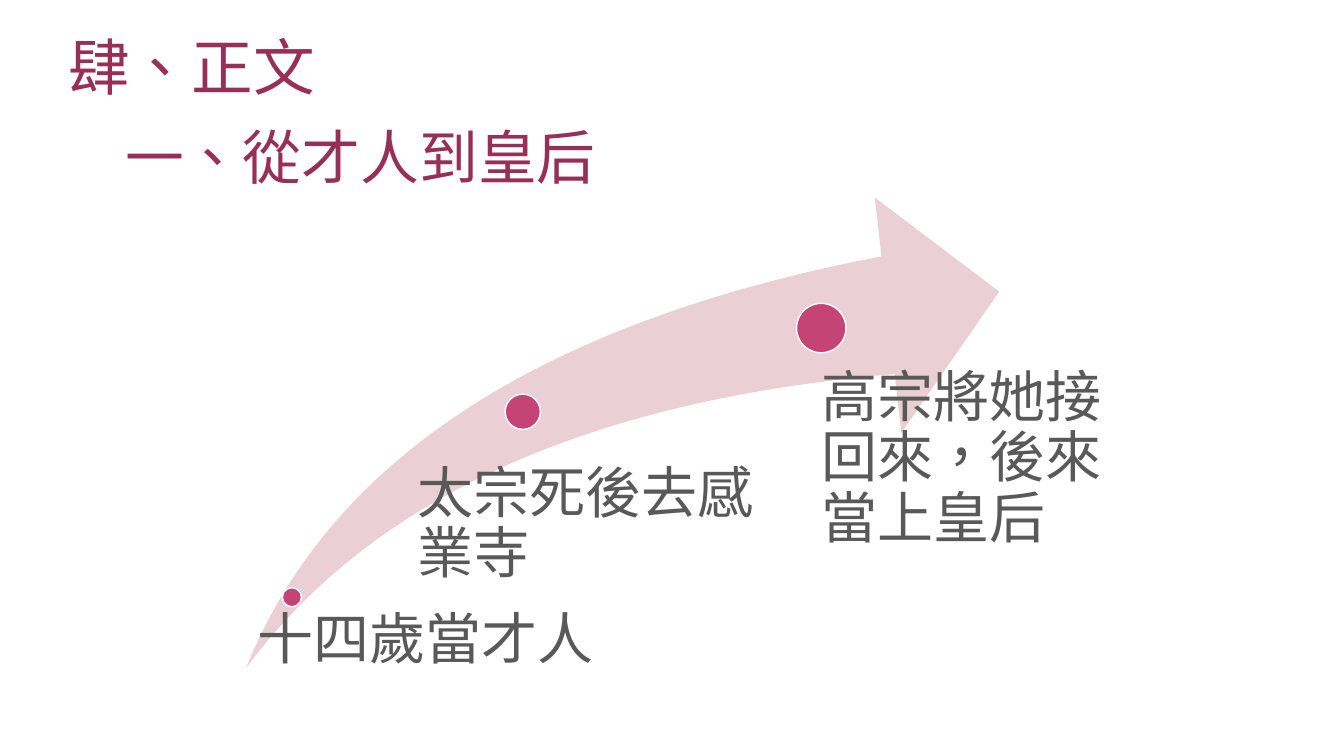
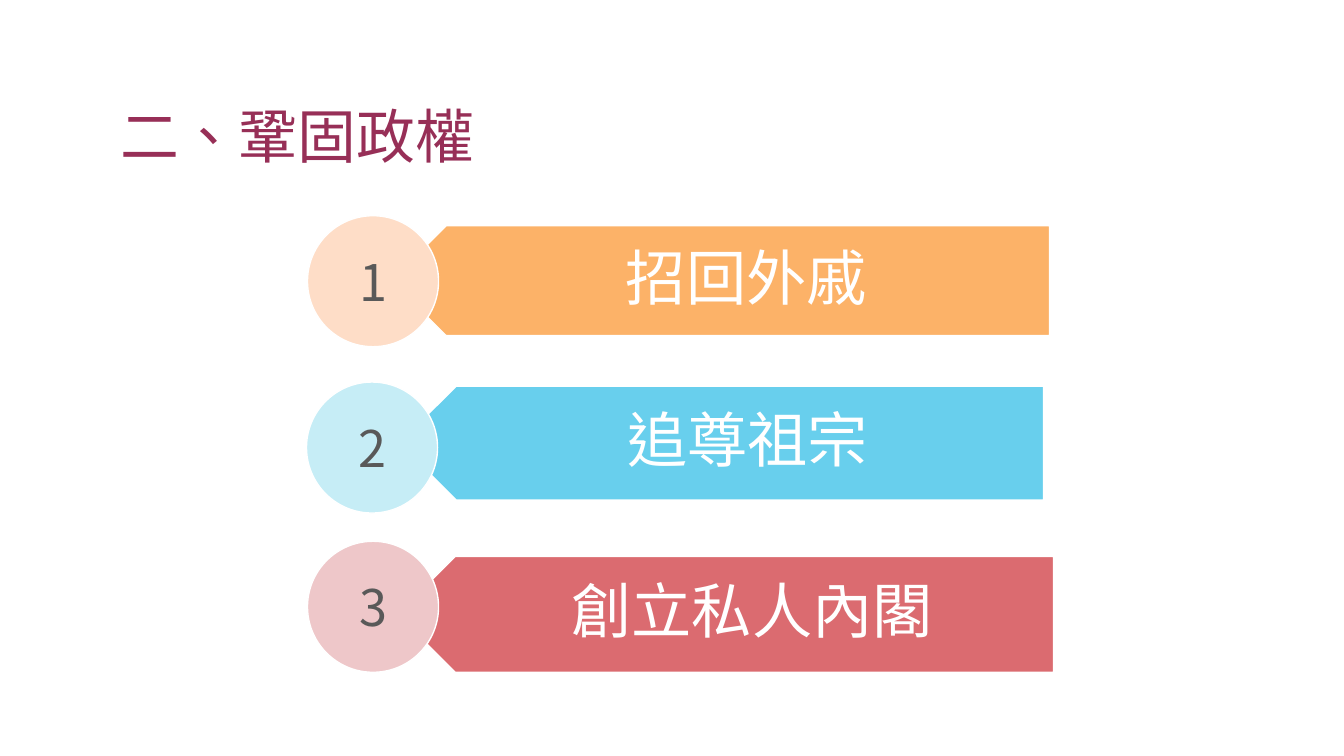
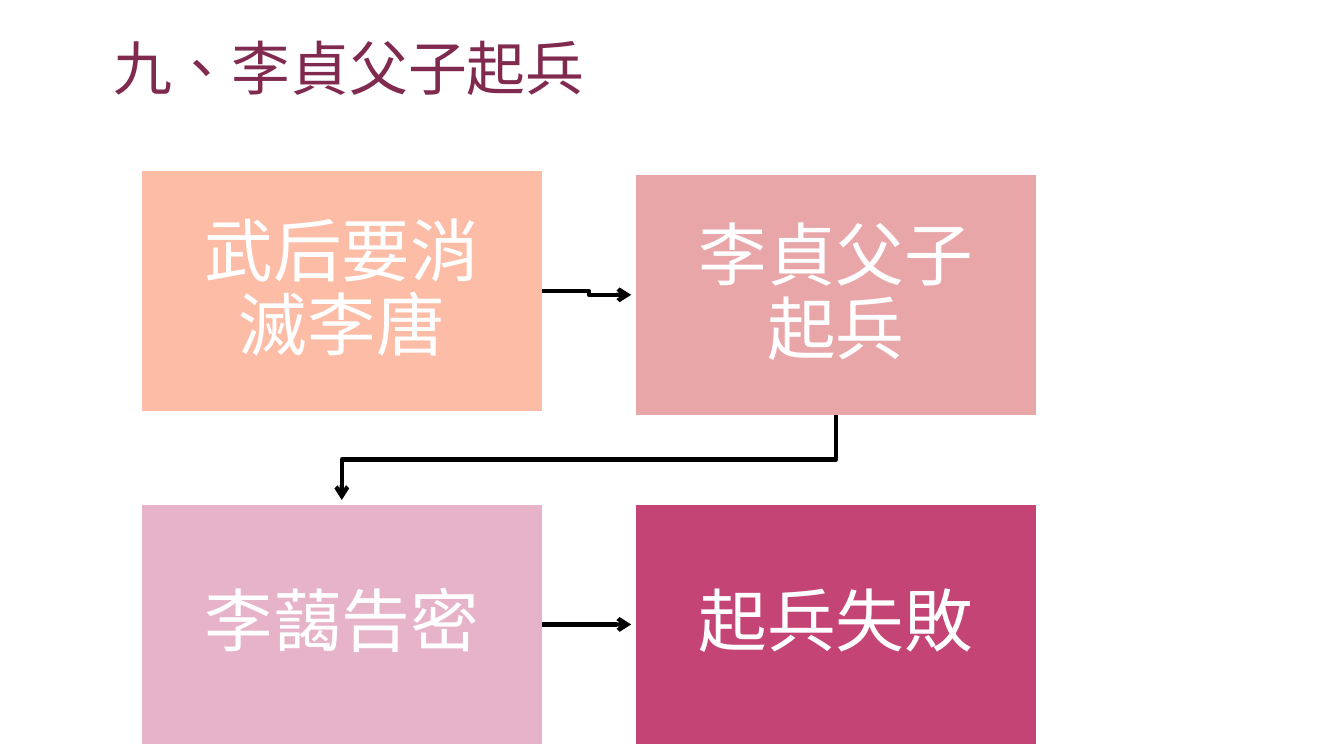
"""Three slides on the rise and rule of an empress."""
from lxml import etree
from pptx import Presentation, util as u
from pptx.dml.color import RGBColor
from pptx.enum import shapes, text
from pptx.oxml.ns import qn

FONT = "Noto Sans CJK SC"
PLUM, WINE, ROSE, GREY, WHITE, BLACK = "972F57", "812A4F", "C44475", "595959", "FFFFFF", "000000"
LEFT, CENTER = text.PP_ALIGN.LEFT, text.PP_ALIGN.CENTER
TOP, MIDDLE, BOTTOM = text.MSO_ANCHOR.TOP, text.MSO_ANCHOR.MIDDLE, text.MSO_ANCHOR.BOTTOM
SHAPE = shapes.MSO_SHAPE

SWOOSH = (2.44, 1.96, 7.47, 4.67)
MILESTONES = [
    ("十四歲當才人", (2.8, 5.83, 0.19), (2.46, 6.06, 3.87, 0.34), 0.1),
    ("太宗死後去感業寺", (5.01, 3.91, 0.35), (3.95, 4.61, 3.97, 0.16), 0.19),
    ("高宗將她接回來，後來當上皇后", (7.9, 3.01, 0.49), (7.89, 3.66, 3.05, 1.05), 0.26),
]
MEASURES = [
    ("招回外戚", "FCB268", (3.88, 2.24, 6.53, 1.09), "FEDDC7", (3.05, 2.14)),
    ("追尊祖宗", "68CFED", (3.96, 3.83, 6.39, 1.13), "C6EDF6", (3.04, 3.79)),
    ("創立私人內閣", "DB6B70", (3.94, 5.52, 6.51, 1.15), "EEC7C9", (3.05, 5.37)),
]
DISC = 1.3
STEP_W, STEP_H, STEP_GAP = 3.98, 2.39, 0.04
STEPS = [
    ("武后要消滅李唐", "FCBCA6", 1.4, 1.69),
    ("李貞父子起兵", "E9A6A9", 6.3, 1.73),
    ("李藹告密", "E6B3C9", 1.4, 5),
    ("起兵失敗", ROSE, 6.3, 5),
]


def rgb(value):
    return RGBColor.from_string(value)


def inches(values):
    return [u.Inches(value) for value in values]


def write(holder, words, size, color, align=LEFT, anchor=TOP, spacing=0.9,
          insets=(0.1, 0.05, 0.1, 0.05), wrap=True):
    frame = holder.text_frame
    frame.word_wrap = wrap
    frame.auto_size = text.MSO_AUTO_SIZE.NONE if wrap else text.MSO_AUTO_SIZE.SHAPE_TO_FIT_TEXT
    frame.vertical_anchor = anchor
    (frame.margin_left, frame.margin_top,
     frame.margin_right, frame.margin_bottom) = inches(insets)
    paragraph = frame.paragraphs[0]
    paragraph.alignment, paragraph.line_spacing = align, spacing
    run = paragraph.add_run()
    run.text = words
    run.font.size, run.font.name = u.Pt(size), FONT
    run.font.color.rgb = rgb(color)
    properties = run._r.get_or_add_rPr()
    properties.set("lang", "zh-TW")
    etree.SubElement(properties, qn("a:ea")).set("typeface", FONT)


def textbox(slide, area, words, size, color, **style):
    write(slide.shapes.add_textbox(*inches(area)), words, size, color, **style)


def titled_slide(deck, words, area, color=PLUM, **style):
    slide = deck.slides.add_slide(deck.slide_layouts[5])
    title = slide.shapes.title
    title.left, title.top, title.width, title.height = inches(area)
    write(title, words, 42, color, **style)
    return slide


def block(slide, kind, area, fill, line=WHITE):
    shape = slide.shapes.add_shape(kind, *inches(area))
    shape.shadow.inherit = False
    shape.fill.solid()
    shape.fill.fore_color.rgb = rgb(fill)
    if line:
        shape.line.color.rgb, shape.line.width = rgb(line), u.Pt(1)
    else:
        shape.line.fill.background()
    return shape


def arrow(slide, *points):
    start, *rest = [tuple(inches(point)) for point in points]
    if len(rest) == 1:
        route = slide.shapes.add_connector(shapes.MSO_CONNECTOR.STRAIGHT, *start, *rest[0])
    else:
        builder = slide.shapes.build_freeform(*start, scale=1.0)
        builder.add_line_segments(rest, close=False)
        route = builder.convert_to_shape()
        route.fill.background()
    route.line.color.rgb, route.line.width = rgb(BLACK), u.Pt(3)
    etree.SubElement(route.line._get_or_add_ln(), qn("a:tailEnd")).set("type", "arrow")
    etree.SubElement(route._element.spPr, qn("a:effectLst"))


def rise_slide(deck):
    slide = titled_slide(deck, "一、從才人到皇后", (1.14, 0.66, 11, 1.3), anchor=BOTTOM)
    textbox(slide, (0.58, 0.24, 2.67, 0.84), "肆、正文", 44, PLUM, spacing=1.0, wrap=False)
    swoosh = block(slide, SHAPE.SWOOSH_ARROW, SWOOSH, "EACFD6", line=None)
    swoosh.adjustments[0] = swoosh.adjustments[1] = 0.25
    for words, (left, top, size), area, indent in MILESTONES:
        block(slide, SHAPE.OVAL, (left, top, size, size), ROSE)
        textbox(slide, area, words, 40, GREY, insets=(indent, 0, 0, 0))


def power_slide(deck):
    slide = titled_slide(deck, "二、鞏固政權", (1.1, 0.45, 11, 1.3), anchor=BOTTOM)
    for number, (words, color, plate, tint, corner) in enumerate(MEASURES, 1):
        left, top, width, height = plate
        block(slide, SHAPE.PENTAGON, plate, color).rotation = 180
        point = height / 4
        textbox(slide, (left + point, top, width - point, height), words, 43, WHITE,
                align=CENTER, anchor=MIDDLE, insets=(0.57, 0.18, 0.33, 0.18))
        disc = block(slide, SHAPE.OVAL, (*corner, DISC, DISC), tint)
        write(disc, str(number), 36, GREY, align=CENTER, anchor=MIDDLE, spacing=1.0)


def revolt_slide(deck):
    slide = titled_slide(deck, "九、李貞父子起兵", (1.03, 0.26, 4.91, 0.81), WINE,
                         spacing=1.0, wrap=False)
    for words, color, left, top in STEPS:
        step = block(slide, SHAPE.RECTANGLE, (left, top, STEP_W, STEP_H), color)
        write(step, words, 49, WHITE, align=CENTER, anchor=MIDDLE, insets=(0.38,) * 4)
    for (_, _, x, y), (_, _, next_x, next_y) in zip(STEPS, STEPS[1:]):
        if next_x > x:
            start = (x + STEP_W, y + STEP_H / 2)
            end = (next_x - STEP_GAP, next_y + STEP_H / 2)
            middle = (start[0] + end[0]) / 2 + 0.02
            bends = [(middle, start[1]), (middle, end[1])] if y != next_y else []
        else:
            start = (x + STEP_W / 2, y + STEP_H)
            end = (next_x + STEP_W / 2, next_y - STEP_GAP)
            middle = (start[1] + end[1]) / 2 + 0.02
            bends = [(start[0], middle), (end[0], middle)]
        arrow(slide, start, *bends, end)


def main():
    deck = Presentation()
    deck.slide_width, deck.slide_height = inches((13.33, 7.5))
    for build in (rise_slide, power_slide, revolt_slide):
        build(deck)
    deck.save("out.pptx")


if __name__ == "__main__":
    main()
